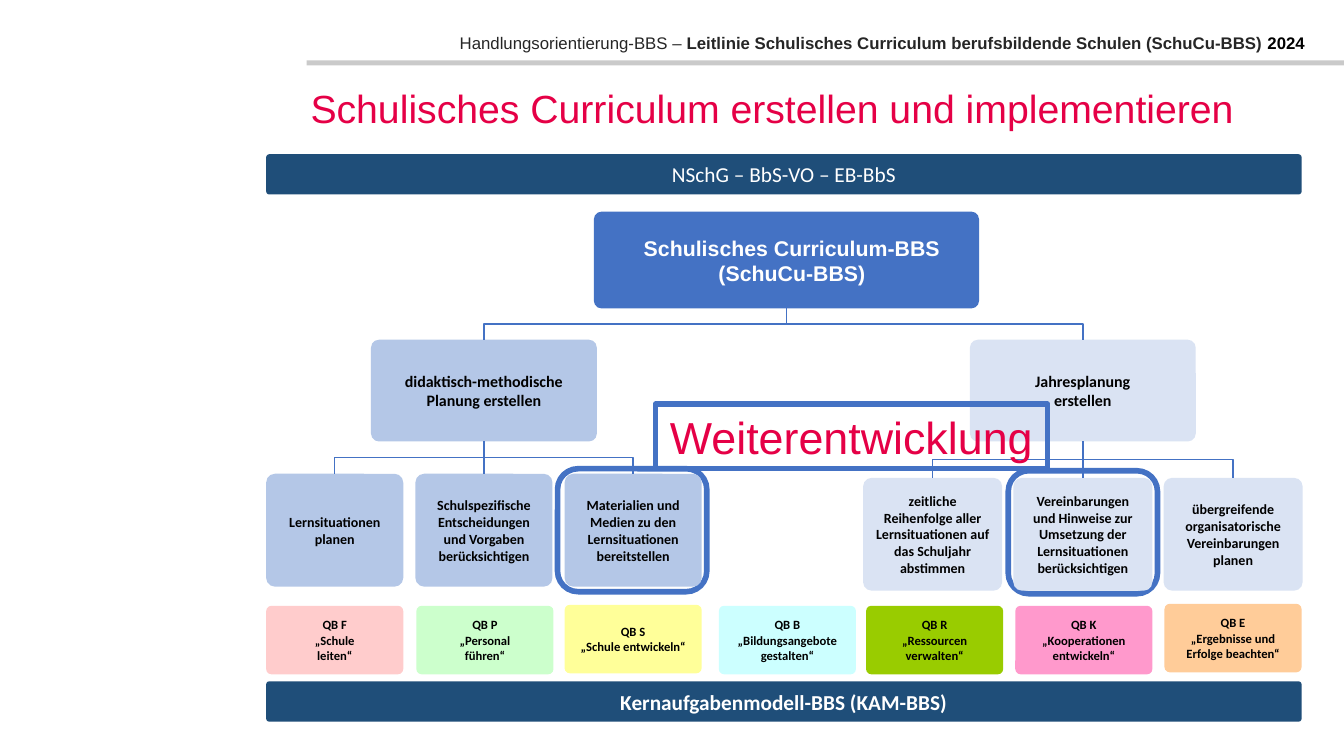
from lxml import etree
from pptx import Presentation
from pptx.dml.color import RGBColor
from pptx.enum.shapes import MSO_CONNECTOR, MSO_SHAPE
from pptx.enum.text import MSO_ANCHOR, PP_ALIGN
from pptx.oxml.ns import qn
from pptx.util import Inches, Pt

RECT, ROUNDED = MSO_SHAPE.RECTANGLE, MSO_SHAPE.ROUNDED_RECTANGLE
ELBOW, STRAIGHT = MSO_CONNECTOR.ELBOW, MSO_CONNECTOR.STRAIGHT
LEFT, CENTER, RIGHT = PP_ALIGN.LEFT, PP_ALIGN.CENTER, PP_ALIGN.RIGHT
MIDDLE = MSO_ANCHOR.MIDDLE
TOP_SITE, BOTTOM_SITE = 0, 2

BLACK = RGBColor(0x00, 0x00, 0x00)
WHITE = RGBColor(0xFF, 0xFF, 0xFF)
DARK_GREY = RGBColor(0x26, 0x26, 0x26)
RULE_GREY = RGBColor(0xCA, 0xCA, 0xCA)
CRIMSON = RGBColor(0xE5, 0x00, 0x46)
BLUE = RGBColor(0x44, 0x72, 0xC4)
NAVY = RGBColor(0x1F, 0x4E, 0x79)
MID_BLUE = RGBColor(0xB4, 0xC7, 0xE7)
PALE_BLUE = RGBColor(0xDA, 0xE3, 0xF3)

BOX_ADJ = 0.078
TASK_H = 1.12

# parent lines, parent left, task left, task top, step, task width, colour, tasks
BRANCHES = [
    (["didaktisch-methodische Planung erstellen"], 3.68, 2.64, 4.7, 1.48, 1.36, MID_BLUE, [
        "Lernsituationen planen",
        "Schulspezifische Entscheidungen und Vorgaben berücksichtigen",
        "Materialien und Medien zu den Lernsituationen bereitstellen"]),
    (["Jahresplanung", "erstellen"], 9.62, 8.56, 4.74, 1.49, 1.38, PALE_BLUE, [
        "zeitliche Reihenfolge aller Lernsituationen auf das Schuljahr abstimmen",
        "Vereinbarungen und Hinweise zur Umsetzung der Lernsituationen berücksichtigen",
        "übergreifende organisatorische Vereinbarungen planen"]),
]

# left, top, colour, lines
QUALITY_AREAS = [
    (2.64, 6.01, RGBColor(0xFF, 0xCC, 0xCC), ["QB F", "„Schule", "leiten“"]),
    (4.13, 6.01, RGBColor(0xCC, 0xFF, 0xCC), ["QB P", "„Personal", "führen“"]),
    (5.6, 6.0, RGBColor(0xFF, 0xFF, 0x99), ["QB S", "„Schule entwickeln“"]),
    (7.13, 6.01, RGBColor(0xCC, 0xFF, 0xFF), ["QB B", "„Bildungsangebote gestalten“"]),
    (8.59, 6.01, RGBColor(0x99, 0xCC, 0x00), ["QB R", "„Ressourcen verwalten“"]),
    (10.07, 6.01, RGBColor(0xFF, 0x99, 0xCC), ["QB K", "„Kooperationen entwickeln“"]),
    (11.55, 5.99, RGBColor(0xFF, 0xCC, 0x99), ["QB E", "„Ergebnisse und Erfolge beachten“"]),
]


def add_run(p, text, size, font="Calibri", color=BLACK, bold=False):
    r = p.add_run()
    r.text = text
    r.font.size, r.font.name, r.font.bold = Pt(size), font, bold
    r.font.color.rgb = color


def write(sp, lines, align=CENTER, spacing=None, **fmt):
    """Fill a shape with one paragraph per line; fmt goes to every run."""
    tf = sp.text_frame
    tf.word_wrap = True
    tf.vertical_anchor = MIDDLE
    for i, line in enumerate(lines):
        p = tf.paragraphs[0] if i == 0 else tf.add_paragraph()
        p.alignment = align
        if spacing:
            p.line_spacing = spacing
        add_run(p, line, **fmt)


def add_box(s, x, y, w, h, kind=ROUNDED, fill=None, line=None, adj=None):
    sp = s.shapes.add_shape(kind, Inches(x), Inches(y), Inches(w), Inches(h))
    sp.shadow.inherit = False
    if fill is None:
        sp.fill.background()
    else:
        sp.fill.solid()
        sp.fill.fore_color.rgb = fill
    if line is None:
        sp.line.fill.background()
    else:
        sp.line.color.rgb = line
        sp.line.width = Pt(4)
    if adj is not None:
        sp.adjustments[0] = adj
    return sp


def add_label_box(s, x, y, w, h, fill, lines, **fmt):
    sp = add_box(s, x, y, w, h, fill=fill, adj=BOX_ADJ)
    write(sp, lines, **fmt)
    return sp


def add_textbox(s, x, y, w, h):
    return s.shapes.add_textbox(Inches(x), Inches(y), Inches(w), Inches(h))


def link(s, child, parent):
    """Join the child's top to the parent's bottom, turning halfway up."""
    x1, y1 = child.left + child.width // 2, child.top
    x2, y2 = parent.left + parent.width // 2, parent.top + parent.height
    straight = abs(x2 - x1) < Inches(0.01)
    c = s.shapes.add_connector(STRAIGHT if straight else ELBOW, x1, y1, x2, y2)
    c.begin_connect(child, TOP_SITE)
    c.end_connect(parent, BOTTOM_SITE)
    c.line.color.rgb = BLUE
    c.line.width = Pt(1)
    sp_pr = c._element.spPr
    etree.SubElement(sp_pr, qn("a:effectLst"))
    if not straight:
        # an elbow leaves sideways, so a quarter turn makes it leave upwards
        rise, run = y1 - y2, abs(x2 - x1)
        c.left, c.top = (x1 + x2 - rise) // 2, (y1 + y2 - run) // 2
        c.width, c.height = rise, run
        from_left = x1 < x2
        xfrm = sp_pr.find(qn("a:xfrm"))
        xfrm.set("rot", str((90 if from_left else 270) * 60000))
        xfrm.set("flipH", "1" if from_left else "0")
        xfrm.set("flipV", "1")


def add_header(s):
    add_box(s, 3.04, 0.6, 10.29, 0.05, kind=RECT, fill=RULE_GREY)
    sp = add_textbox(s, 4.46, 0.27, 8.58, 0.3)
    write(sp, ["Handlungsorientierung-BBS – "], align=RIGHT, size=12, font="Arial", color=DARK_GREY)
    p = sp.text_frame.paragraphs[0]
    add_run(p, "Leitlinie Schulisches Curriculum berufsbildende Schulen (SchuCu-BBS) ",
            12, font="Arial", color=DARK_GREY, bold=True)
    add_run(p, "2024", 12, font="Arial", bold=True)


def add_title(s, text):
    sp = s.shapes.title
    sp.left, sp.top, sp.width, sp.height = Inches(2.98), Inches(0.65), Inches(9.61), Inches(0.9)
    write(sp, [text], align=LEFT, spacing=0.9, size=28, font="Arial", color=CRIMSON)


def add_tree(s):
    root = add_box(s, 5.89, 2.1, 3.82, 0.96, fill=BLUE, adj=BOX_ADJ)
    write(add_textbox(s, 6.19, 2.28, 3.33, 0.61), ["Schulisches Curriculum-BBS", "(SchuCu-BBS)"],
          size=15.2, font="Arial", color=WHITE, bold=True)
    for lines, parent_x, x, y, step, w, fill, tasks in BRANCHES:
        parent = add_label_box(s, parent_x, 3.37, 2.24, 1.01, fill, lines, size=11.4, bold=True)
        link(s, parent, root)
        for i, task in enumerate(tasks):
            child = add_label_box(s, x + i * step, y, w, TASK_H, fill, [task], size=10, bold=True)
            link(s, child, parent)


def main():
    prs = Presentation()
    prs.slide_width, prs.slide_height = Inches(13.33), Inches(7.5)
    s = prs.slides.add_slide(prs.slide_layouts[5])
    add_header(s)
    add_title(s, "Schulisches Curriculum erstellen und implementieren")
    for x, y in ((10, 4.67), (5.53, 4.65)):
        add_box(s, x, y, 1.48, 1.22, line=BLUE)
    add_tree(s)
    for x, y, fill, lines in QUALITY_AREAS:
        add_label_box(s, x, y, 1.36, 0.68, fill, lines, size=9, bold=True)
    for y, text, bold in ((1.53, "NSchG – BbS-VO – EB-BbS", False),
                          (6.76, "Kernaufgabenmodell-BBS (KAM-BBS)", True)):
        add_label_box(s, 2.64, y, 10.27, 0.4, NAVY, [text], size=15.2, color=WHITE, bold=bold)
    banner = add_box(s, 6.5, 4.01, 3.89, 0.64, kind=RECT, line=BLUE)
    write(banner, ["Weiterentwicklung"], size=32, font="Arial", color=CRIMSON)
    prs.save("out.pptx")


if __name__ == "__main__":
    main()
